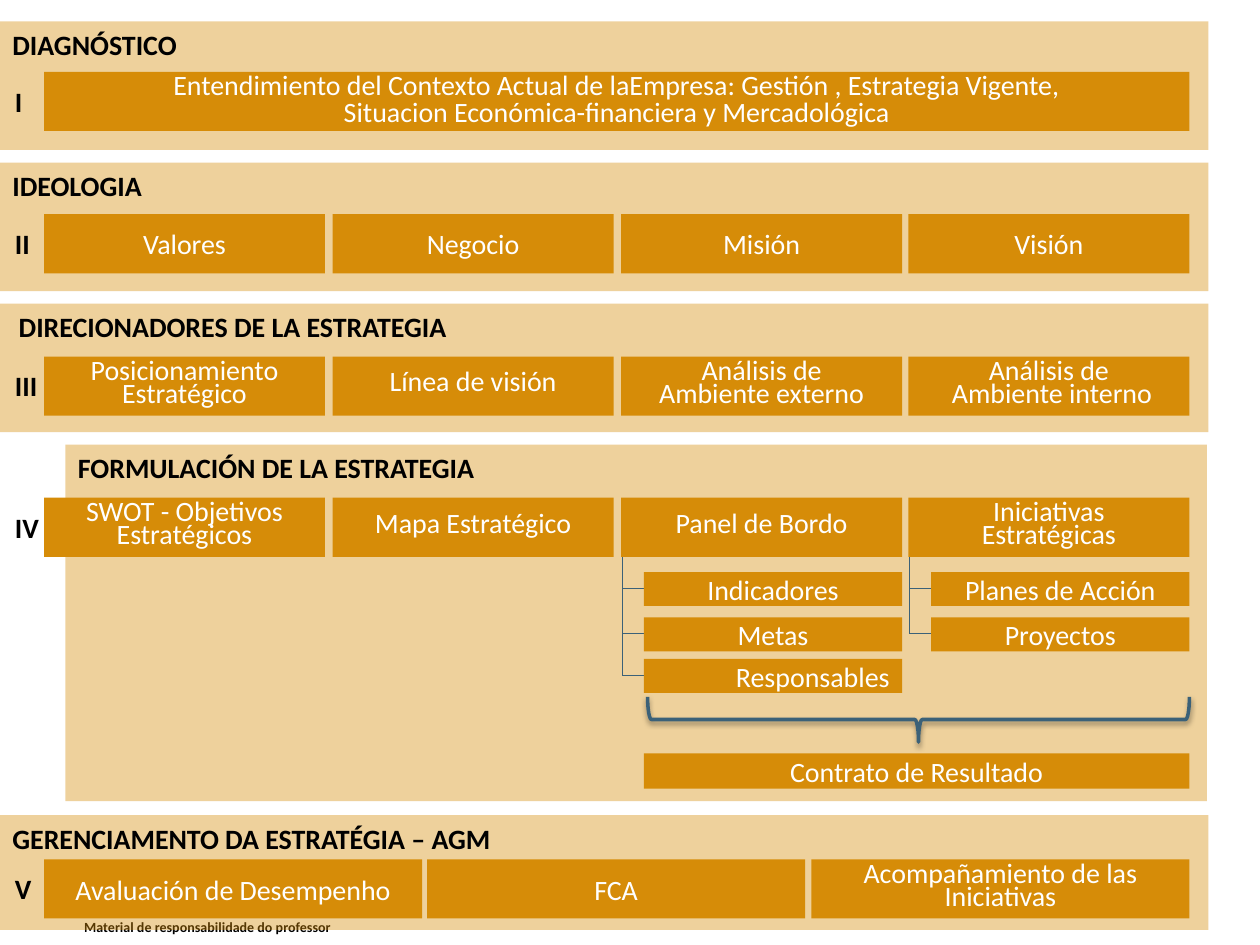
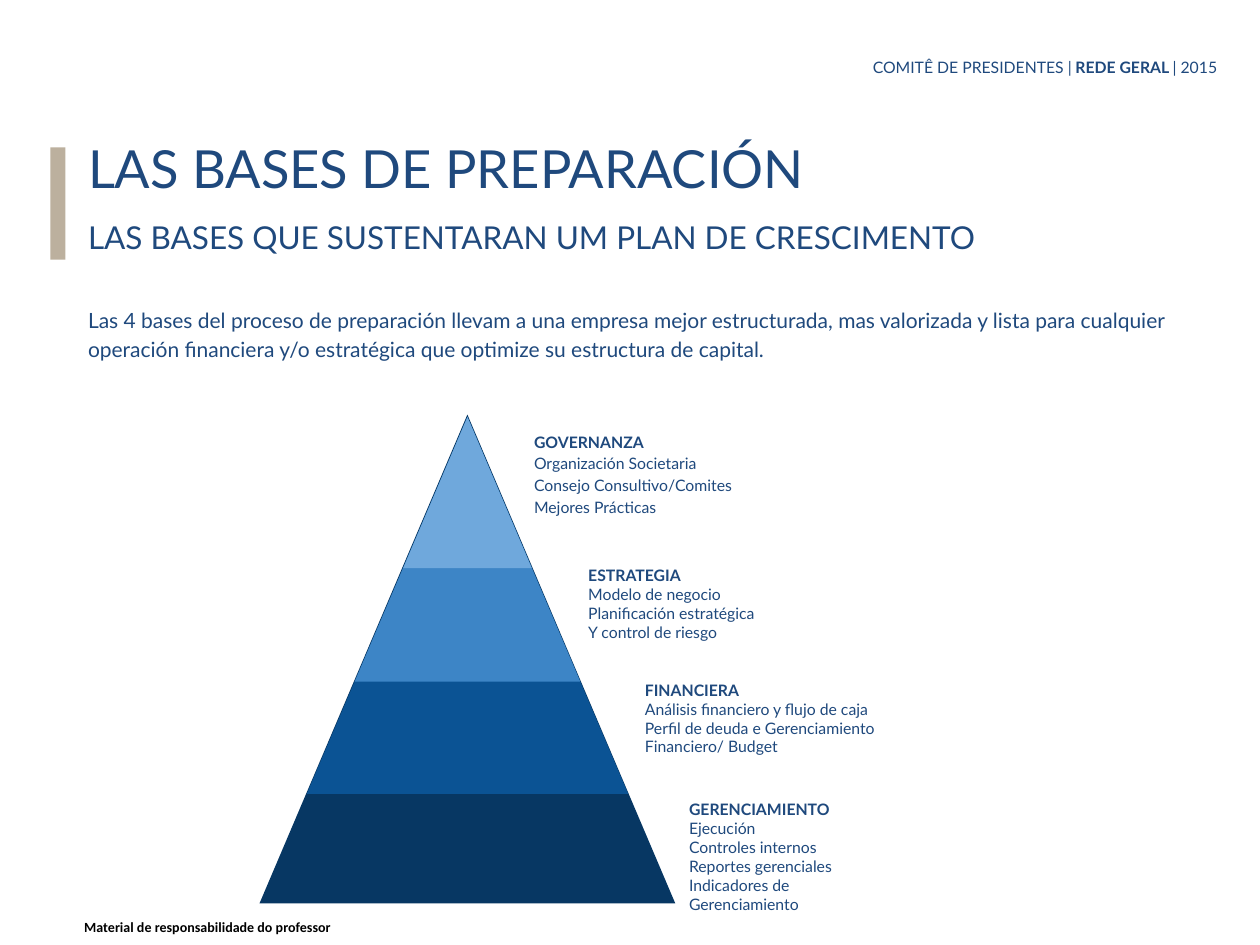
from dataclasses import dataclass

from lxml import etree
from pptx import Presentation
from pptx.dml.color import RGBColor
from pptx.enum.shapes import MSO_CONNECTOR, MSO_SHAPE
from pptx.enum.text import MSO_ANCHOR, PP_ALIGN
from pptx.oxml.ns import qn
from pptx.util import Emu, Pt

RECTANGLE = MSO_SHAPE.RECTANGLE
TRIANGLE = MSO_SHAPE.FLOWCHART_EXTRACT
BRACE = MSO_SHAPE.LEFT_BRACE
STRAIGHT = MSO_CONNECTOR.STRAIGHT
LEFT, CENTER, RIGHT = PP_ALIGN.LEFT, PP_ALIGN.CENTER, PP_ALIGN.RIGHT
TOP, MIDDLE = MSO_ANCHOR.TOP, MSO_ANCHOR.MIDDLE

EMU_PER_PX = 9144  # 100 px to the inch


@dataclass(frozen=True)
class Theme:
    amber: str = "D68C08"
    steel: str = "3B6178"
    navy: str = "1F497D"
    sand: str = "BCB09E"
    black: str = "000000"
    white: str = "FFFFFF"
    levels: tuple = ("073763", "0B5394", "3D85C6", "6FA8DC")
    process_font: str = "Calibri"
    base_font: str = "Lato"
    process_size: int = 16
    footer_size: int = 8
    title_size: int = 30
    subtitle_size: int = 18
    body_size: int = 12
    small_size: int = 9


THEME = Theme()
PROCESS_BOLD = {"name": THEME.process_font, "size": THEME.process_size,
                "color": THEME.black, "bold": True}
PROCESS_LIGHT = {**PROCESS_BOLD, "color": THEME.white, "bold": False}
FOOTER = {**PROCESS_BOLD, "size": THEME.footer_size}
SMALL = {"name": THEME.base_font, "size": THEME.small_size,
         "color": THEME.navy, "bold": False}


def px(*lengths):
    return [Emu(round(length * EMU_PER_PX)) for length in lengths]


# Text

def format_span(span, style):
    values = {**style, "size": Pt(style["size"])}
    span.font.color.rgb = RGBColor.from_string(values.pop("color"))
    for name, value in values.items():
        setattr(span.font, name, value)


def write(shape, paras, style, align=LEFT, anchor=TOP, spacing=None,
          wrap=True, inset=None):
    """Each paragraph is a string or a list of (text, bold) spans."""
    frame = shape.text_frame
    settings = {"word_wrap": wrap, "vertical_anchor": anchor}
    if inset is not None:
        for side in ("left", "top", "right", "bottom"):
            settings["margin_" + side] = px(inset)[0]
    for name, value in settings.items():
        setattr(frame, name, value)
    for index, content in enumerate(paras):
        para = frame.add_paragraph() if index else frame.paragraphs[0]
        para.alignment = align
        if spacing:
            para.line_spacing = spacing
        if isinstance(content, str):
            para.text = content
            for span in para.runs:
                format_span(span, style)
        else:
            for text, bold in content:
                span = para.add_run()
                span.text = text
                format_span(span, {**style, "bold": bold})


def add_text(page, box, paras, style, **options):
    write(page.shapes.add_textbox(*px(*box)), paras, style, **options)


# Shapes

def add_filled(page, kind, box, color, opacity=None):
    shape = page.shapes.add_shape(kind, *px(*box))
    shape.shadow.inherit = False
    shape.fill.solid()
    shape.fill.fore_color.rgb = RGBColor.from_string(color)
    shape.line.fill.background()
    if opacity:
        tint = shape.element.spPr.find(qn("a:solidFill"))[0]
        etree.SubElement(tint, qn("a:alpha"), val=str(opacity * 1000))
    return shape


def add_line(page, *ends):
    line = page.shapes.add_connector(STRAIGHT, *px(*ends))
    line.line.color.rgb = RGBColor.from_string(THEME.steel)
    line.line.width = Pt(0.75)
    etree.SubElement(line.element.spPr, qn("a:effectLst"))


def add_step(page, box, paras, spacing=None, align=CENTER):
    shape = add_filled(page, RECTANGLE, box, THEME.amber)
    write(shape, paras, PROCESS_LIGHT, align, MIDDLE,
          Pt(spacing) if spacing else None, wrap=False)


def add_footer(page):
    add_text(page, (57, 724, 567, 23),
             ["Material de responsabilidade do professor"], FOOTER)


# Process map

STEP_LEFT, STEP_SPAN, STEP_HEIGHT = 35, 909, 47

# numeral, title, band box, top of steps in band, gap, steps (lines, spacing)
STAGES = [
    ("I", "DIAGNÓSTICO", (0, 17, 959, 102), 40, 0, [
        (["Entendimiento del Contexto Actual de laEmpresa: Gestión , Estrategia Vigente,",
          "Situacion Económica-financiera y Mercadológica"], 15)]),
    ("II", "IDEOLOGIA", (0, 129, 959, 102), 41, 6, [
        (["Valores"], None), (["Negocio"], None),
        (["Misión"], None), (["Visión"], None)]),
    ("III", " DIRECIONADORES DE LA ESTRATEGIA", (0, 241, 959, 102), 42, 6, [
        (["Posicionamiento", "Estratégico"], 13), (["Línea de visión"], 13),
        (["Análisis de", "Ambiente externo"], 13),
        (["Análisis de", " Ambiente interno"], 13)]),
    ("IV", "FORMULACIÓN DE LA ESTRATEGIA", (52, 353, 906, 283), 42, 6, [
        (["SWOT - Objetivos", "Estratégicos"], 13), (["Mapa Estratégico"], 13),
        (["Panel de Bordo"], 13), (["Iniciativas", "Estratégicas"], 13)]),
    ("V", "GERENCIAMENTO DA ESTRATÉGIA – AGM", (0, 647, 959, 91), 35, 4, [
        (["Avaluación de Desempenho"], None), (["FCA"], None),
        (["Acompañamiento de las\nIniciativas"], 13)]),
]


def add_stage(page, numeral, title, band, offset, gap, steps):
    """Draws a band with its row of steps and returns the step boxes."""
    write(add_filled(page, RECTANGLE, band, THEME.amber, opacity=40),
          [title], PROCESS_BOLD)
    top = band[1] + offset
    add_text(page, (2, top + 5, 40, 37), [numeral], PROCESS_BOLD, wrap=False)
    pitch = (STEP_SPAN + gap) / len(steps)
    boxes = []
    for index, (lines, spacing) in enumerate(steps):
        box = (STEP_LEFT + round(index * pitch), top,
               round(pitch - gap), STEP_HEIGHT)
        add_step(page, box, lines, spacing)
        boxes.append(box)
    return boxes


def add_branches(page, parent, children):
    """Hangs (name, distance below parent, alignment) boxes on a stem."""
    left, top, width, height = parent
    stem, bottom, child_height = left + 1, top + height, 27
    joints = [bottom + drop + child_height // 2 for _, drop, _ in children]
    add_line(page, stem, bottom, stem, joints[-1])
    for (name, drop, align), joint in zip(children, joints):
        add_line(page, stem, joint, left + 18, joint)
        add_step(page, (left + 18, bottom + drop, width - 18, child_height),
                 [name], align=align)


def add_brace(page, box):
    """Fits a left brace, turned to point down, into a wide box."""
    left, top, width, height = box
    shift = (width - height) / 2
    brace = page.shapes.add_shape(
        BRACE, *px(left + shift, top - shift, height, width))
    brace.rotation = 270
    brace.fill.background()
    brace.line.color.rgb = RGBColor.from_string(THEME.steel)
    brace.line.width = Pt(2)
    effects = etree.SubElement(brace.element.spPr, qn("a:effectLst"))
    shadow = etree.SubElement(
        effects, qn("a:outerShdw"), blurRad=str(Pt(3.1)), dist=str(Pt(1.6)),
        dir="5400000", rotWithShape="0")
    tint = etree.SubElement(shadow, qn("a:srgbClr"), val=THEME.black)
    etree.SubElement(tint, qn("a:alpha"), val="38000")


def build_process(page):
    add_footer(page)
    rows = {stage[0]: add_stage(page, *stage) for stage in STAGES}
    panel, initiatives = rows["IV"][2:]
    add_branches(page, panel, [("Indicadores", 12, CENTER),
                               ("Metas", 48, CENTER),
                               ("Responsables", 81, RIGHT)])
    add_branches(page, initiatives, [("Planes de Acción", 12, CENTER),
                                     ("Proyectos", 48, CENTER)])
    add_brace(page, (514, 553, 430, 36))
    add_step(page, (511, 598, 433, 28), ["Contrato de Resultado"])


# Pyramid of bases

APEX = 371
LAYERS = [(329, 330, 388), (331, 255, 299), (331, 179, 210), (331, 102, 120)]

# text box, line spacing, heading, lines
BASES = [
    ((414, 331, 199, 120), 1.15, "GOVERNANZA",
     ["Organización Societaria", "Consejo Consultivo/Comites",
      "Mejores Prácticas"]),
    ((457, 439, 179, 108), None, "ESTRATEGIA",
     ["Modelo de negocio", "Planificación estratégica",
      "Y control de riesgo"]),
    ((502, 530, 248, 120), None, "FINANCIERA",
     ["Análisis financiero y flujo de caja",
      "Perfil de deuda e Gerenciamiento Financiero/ Budget"]),
    ((537, 625, 179, 108), None, "GERENCIAMIENTO",
     ["Ejecución", "Controles internos", "Reportes gerenciales",
      "Indicadores de Gerenciamiento"]),
]


def add_heading(page):
    add_text(page, (439, 38, 540, 82),
             [[("COMITÊ DE PRESIDENTES |", False), (" REDE GERAL ", True),
               ("| 2015 ", False)]], SMALL, align=RIGHT, inset=10)
    add_filled(page, RECTANGLE, (40, 117, 12, 89), THEME.sand)
    for box, size, spacing, text in [
        ((60, 98, 859, 93), THEME.title_size, None, "LAS BASES DE PREPARACIÓN"),
        ((60, 163, 795, 82), THEME.subtitle_size, None,
         "LAS BASES QUE SUSTENTARAN UM PLAN DE CRESCIMENTO"),
        ((60, 231, 879, 89), THEME.body_size, 1.15,
         "Las 4 bases del proceso de preparación llevam a una empresa mejor "
         "estructurada, mas valorizada y lista para cualquier operación "
         "financiera y/o estratégica que optimize su estructura de capital."),
    ]:
        add_text(page, box, [text], {**SMALL, "size": size},
                 spacing=spacing, inset=10)


def add_pyramid(page):
    for (top, width, height), color in zip(LAYERS, THEME.levels):
        add_filled(page, TRIANGLE, (APEX - width / 2, top, width, height), color)
    for box, spacing, heading, lines in BASES:
        add_text(page, box, [[(heading, True)], *lines], SMALL,
                 spacing=spacing, inset=10)


def build_bases(page):
    add_footer(page)
    add_heading(page)
    add_pyramid(page)


def main():
    deck = Presentation()
    deck.slide_width, deck.slide_height = px(1000, 750)
    for build in (build_process, build_bases):
        build(deck.slides.add_slide(deck.slide_layouts[6]))
    deck.save("out.pptx")


if __name__ == "__main__":
    main()
